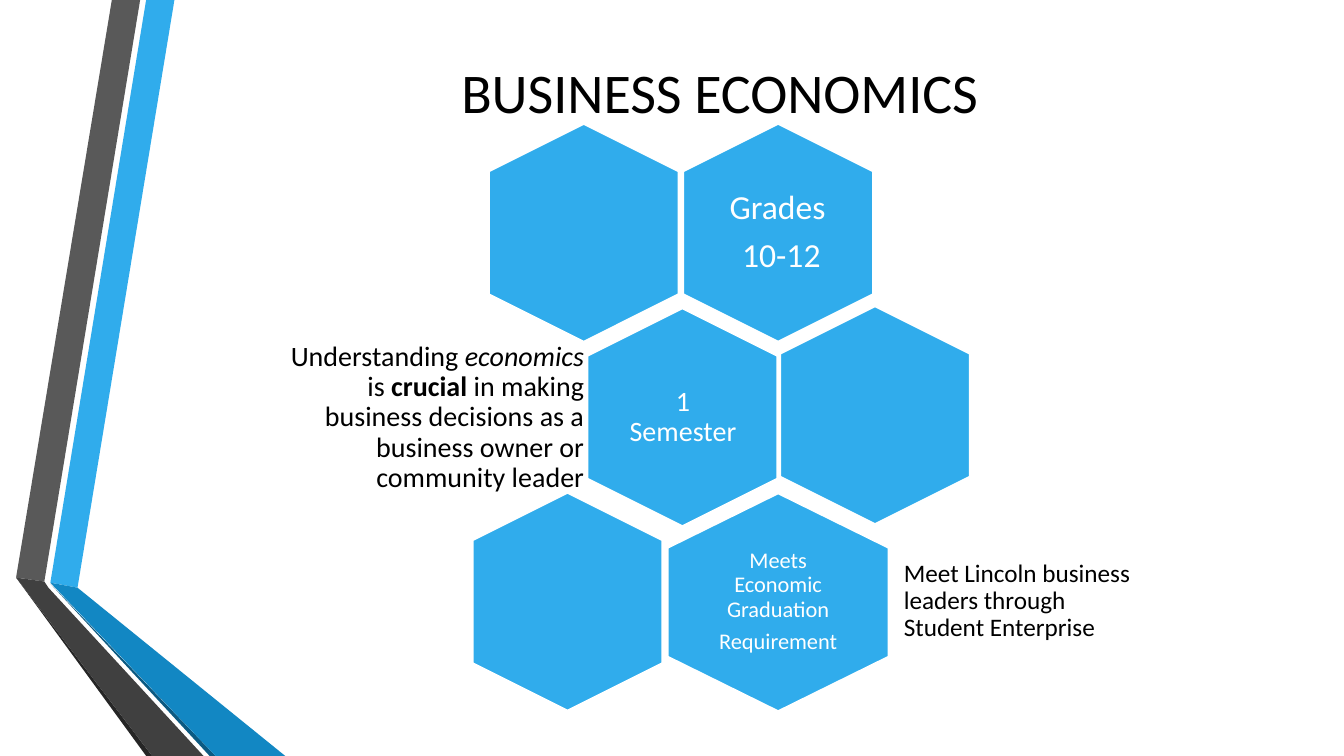
from dataclasses import dataclass

from pptx import Presentation
from pptx.dml.color import RGBColor
from pptx.enum.shapes import MSO_SHAPE
from pptx.enum.text import MSO_ANCHOR, MSO_AUTO_SIZE, PP_ALIGN
from pptx.util import Pt


@dataclass(frozen=True)
class Theme:
    font: str = "Calibri"
    black: str = "000000"
    white: str = "FFFFFF"
    blue: str = "30ACEC"
    deep_blue: str = "1287C3"
    navy: str = "0C5A82"
    gray: str = "595959"
    charcoal: str = "404040"
    shadow_gray: str = "262626"
    title: int = 40
    large: int = 24
    medium: int = 20
    caption: int = 18
    small: int = 16


THEME = Theme()

RIBBONS = [
    (THEME.blue, [(36, 416.2), (55.4, 419.8), (124.6, 0), (104.4, 0)]),
    (THEME.gray, [(100.1, 0), (79.9, 0), (11.5, 412.6), (31.7, 415.4)]),
    (THEME.shadow_gray, [(11.5, 412.6), (104.4, 540), (108.7, 540)]),
    (THEME.navy, [(36, 416.9), (149.8, 540), (154.1, 540)]),
    (THEME.deep_blue, [(36, 416.2), (154.1, 540), (203.8, 540), (55.4, 419.8)]),
    (THEME.charcoal, [(145.4, 540), (34.6, 419.8), (31.7, 415.4),
                      (11.5, 412.6), (108.7, 540)]),
]

HEX_LENGTH = 155.5
HEX_WIDTH = 135.4
WIDE_HEX_WIDTH = 157.7
HEXAGONS = [
    (555.8, 166.3, HEX_WIDTH),
    (416.9, 166.3, HEX_WIDTH),
    (487.4, 298.1, HEX_WIDTH),
    (625, 296.6, HEX_WIDTH),
    (555.8, 430.2, WIDE_HEX_WIDTH),
    (405.4, 429.8, HEX_WIDTH),
]


def rgb(color):
    return RGBColor.from_string(color)


def style_font(font, size, color):
    font.name = THEME.font
    font.size = Pt(size)
    font.color.rgb = rgb(color)


def add_title(s, text):
    sp = s.shapes.title
    sp.left, sp.top, sp.width, sp.height = Pt(119.5), Pt(27.4), Pt(789.1), Pt(75.6)
    tf = sp.text_frame
    tf.text = text
    tf.vertical_anchor = MSO_ANCHOR.MIDDLE
    p = tf.paragraphs[0]
    p.alignment = PP_ALIGN.CENTER
    style_font(p.font, THEME.title, THEME.black)


def add_ribbon(s, color, points):
    start, *rest = [(Pt(x), Pt(y)) for x, y in points]
    builder = s.shapes.build_freeform(*start)
    builder.add_line_segments(rest, close=True)
    sp = builder.convert_to_shape()
    sp.shadow.inherit = False
    sp.fill.solid()
    sp.fill.fore_color.rgb = rgb(color)
    sp.line.fill.background()


def add_hexagon(s, center_x, center_y, width):
    sp = s.shapes.add_shape(
        MSO_SHAPE.HEXAGON,
        Pt(center_x - HEX_LENGTH / 2), Pt(center_y - width / 2),
        Pt(HEX_LENGTH), Pt(width))
    sp.rotation = 90
    sp.adjustments[0] = 0.25
    sp.shadow.inherit = False
    sp.fill.solid()
    sp.fill.fore_color.rgb = rgb(THEME.blue)
    sp.line.color.rgb = rgb(THEME.white)
    sp.line.width = Pt(1.25)


def add_label(s, box, paragraphs, size, color, align, inset):
    tf = s.shapes.add_textbox(*map(Pt, box)).text_frame
    tf.word_wrap = True
    tf.auto_size = MSO_AUTO_SIZE.NONE
    tf.vertical_anchor = MSO_ANCHOR.MIDDLE
    tf.margin_left = tf.margin_right = tf.margin_top = tf.margin_bottom = Pt(inset)
    for i, runs in enumerate(paragraphs):
        p = tf.add_paragraph() if i else tf.paragraphs[0]
        p.alignment = align
        p.line_spacing = 0.9
        p.space_after = Pt(size * 0.35)
        style_font(p.font, size, color)
        for text, emphasis in runs:
            r = p.add_run()
            r.text = text
            if emphasis == "bold":
                r.font.bold = True
            elif emphasis == "italic":
                r.font.italic = True


def main():
    prs = Presentation()
    prs.slide_width, prs.slide_height = Pt(960), Pt(540)
    s = prs.slides.add_slide(prs.slide_layouts[5])

    for color, points in RIBBONS:
        add_ribbon(s, color, points)
    add_title(s, "BUSINESS ECONOMICS")
    for hexagon in HEXAGONS:
        add_hexagon(s, *hexagon)

    add_label(s, (509, 113, 92.9, 106.6),
              [[("Grades", None)], [(" 10-12", None)]],
              THEME.large, THEME.white, PP_ALIGN.CENTER, 7.2)
    add_label(s, (441.4, 244.8, 92.9, 106.6), [[("1 Semester", None)]],
              THEME.medium, THEME.white, PP_ALIGN.CENTER, 6)
    add_label(s, (187.9, 243.4, 235.4, 110.2),
              [[("Understanding ", None), ("economics", "italic"), (" is ", None),
                ("crucial", "bold"),
                (" in making business decisions as a business owner"
                 " or community leader", None)]],
              THEME.medium, THEME.black, PP_ALIGN.RIGHT, 6)
    add_label(s, (503.3, 378, 105.1, 103.7),
              [[("Meets Economic Graduation", None)], [("Requirement", None)]],
              THEME.small, THEME.white, PP_ALIGN.CENTER, 4.8)
    add_label(s, (640.8, 383, 173.5, 92.9),
              [[("Meet Lincoln business leaders through Student Enterprise", None)]],
              THEME.caption, THEME.black, PP_ALIGN.LEFT, 4.8)

    prs.save("out.pptx")


if __name__ == "__main__":
    main()
